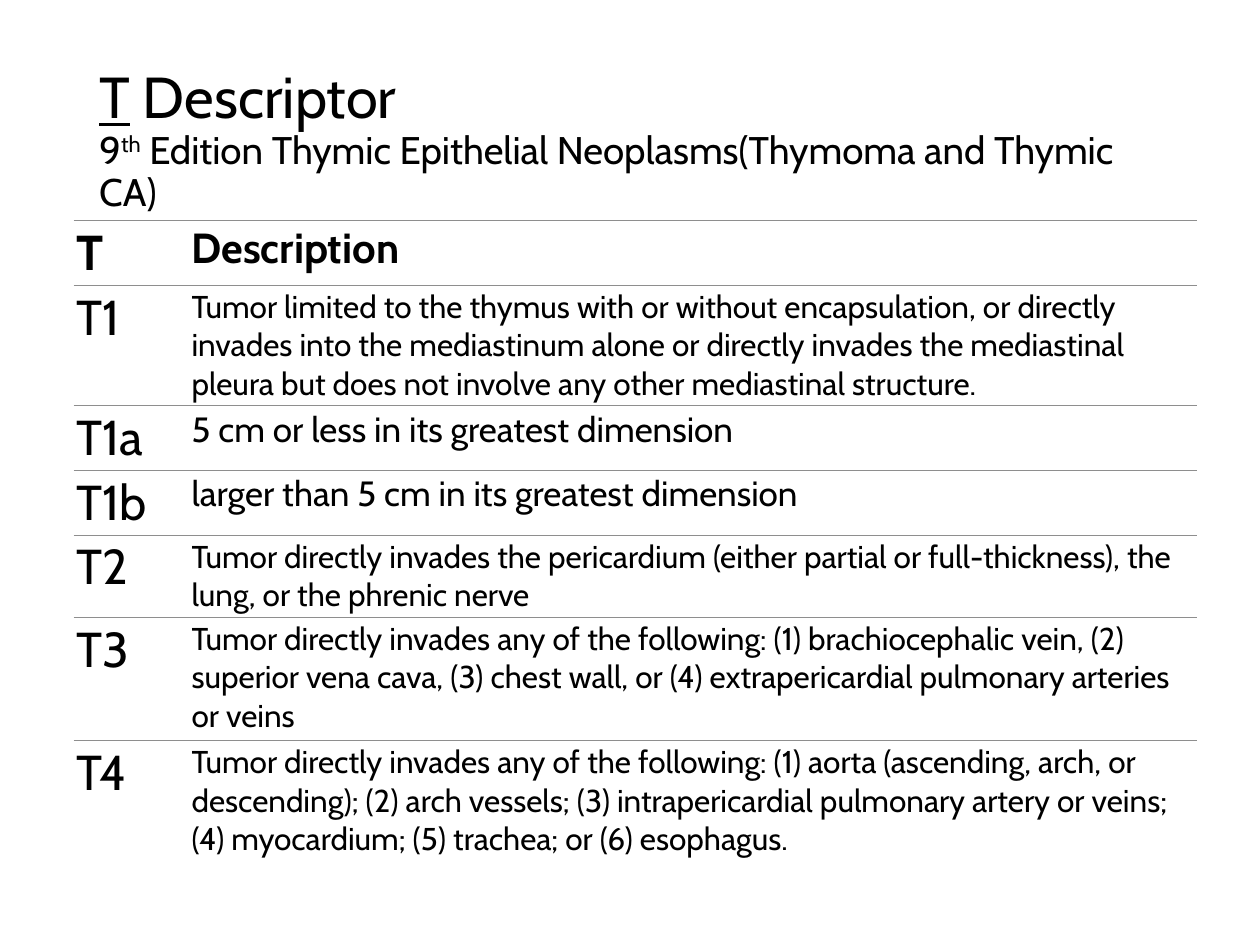
import lxml.etree
import pptx
import pptx.dml.color
import pptx.enum.text
import pptx.oxml.ns
import pptx.util

Pt = pptx.util.Pt
qn = pptx.oxml.ns.qn

BLACK = pptx.dml.color.RGBColor(0x00, 0x00, 0x00)
RULE_GRAY = pptx.dml.color.RGBColor(0x8E, 0x8E, 0x8E)

TITLE_RUNS = [
    ("T", 33, {"u": "sng"}),
    (" Descriptor", 33, {}),
    None,
    ("9", 22, {}),
    ("th", 22, {"baseline": "30000"}),
    (" Edition Thymic Epithelial Neoplasms(Thymoma and Thymic CA)", 22, {}),
]

DESCRIPTORS = [
    ("T", "Description", 24, 34.6),
    ("T1", "Tumor limited to the thymus with or without encapsulation, or directly "
     "invades into the mediastinum alone or directly invades the mediastinal pleura "
     "but does not involve any other mediastinal structure.", 18, 59.8),
    ("T1a", "5 cm or less in its greatest dimension", 20, 34.6),
    ("T1b", "larger than 5 cm in its greatest dimension", 20, 34.6),
    ("T2", "Tumor directly invades the pericardium (either partial or full-thickness), "
     "the lung, or the phrenic nerve", 18, 43.9),
    ("T3", "Tumor directly invades any of the following: (1) brachiocephalic vein, "
     "(2) superior vena cava, (3) chest wall, or (4) extrapericardial pulmonary "
     "arteries or veins", 18, 70.6),
    ("T4", "Tumor directly invades any of the following: (1) aorta (ascending, arch, "
     "or descending); (2) arch vessels; (3) intrapericardial pulmonary artery or "
     "veins; (4) myocardium; (5) trachea; or (6) esophagus.", 18, 85),
]


class DescriptorSlide:
    font_name = "Cabin"
    code_size = 28
    cell_inset = Pt(1.5)
    rule_width = Pt(0.75)

    def __init__(self, presentation):
        self.slide = presentation.slides.add_slide(presentation.slide_layouts[5])

    def style(self, font, size, bold=False):
        font.name = self.font_name
        font.size = Pt(size)
        font.bold = bold
        font.color.rgb = BLACK

    def title(self, left, top, width, height, runs):
        heading = self.slide.shapes.title
        heading.left, heading.top = Pt(left), Pt(top)
        heading.width, heading.height = Pt(width), Pt(height)
        frame = heading.text_frame
        frame.word_wrap = True
        frame.auto_size = pptx.enum.text.MSO_AUTO_SIZE.NONE
        frame.vertical_anchor = pptx.enum.text.MSO_ANCHOR.MIDDLE
        paragraph = frame.paragraphs[0]
        paragraph.alignment = pptx.enum.text.PP_ALIGN.LEFT
        paragraph.line_spacing = 0.9
        self.style(paragraph.font, runs[0][1])
        for part in runs:
            if part is None:
                paragraph.add_line_break()
                line_break = paragraph._p.findall(qn("a:br"))[-1]
                lxml.etree.SubElement(line_break, qn("a:rPr"), sz=str(runs[0][1] * 100))
                continue
            text, size, attributes = part
            run = paragraph.add_run()
            run.text = text
            run.font.size = Pt(size)
            for name, value in attributes.items():
                run._r.get_or_add_rPr().set(name, value)

    def borders(self, cell, ruled_sides):
        properties = cell._tc.get_or_add_tcPr()
        for position, side in enumerate("LRTB"):
            line = lxml.etree.Element(qn(f"a:ln{side}"), w=str(self.rule_width))
            if side in ruled_sides:
                fill = lxml.etree.SubElement(line, qn("a:solidFill"))
                lxml.etree.SubElement(fill, qn("a:srgbClr"), val=str(RULE_GRAY))
            else:
                lxml.etree.SubElement(line, qn("a:noFill"))
            properties.insert(position, line)

    def cell(self, cell, text, size, bold, ruled_sides):
        cell.margin_left = cell.margin_right = self.cell_inset
        cell.margin_top = cell.margin_bottom = self.cell_inset
        cell.fill.background()
        cell.text = text
        self.style(cell.text_frame.paragraphs[0].font, size, bold)
        self.borders(cell, ruled_sides)

    def table(self, left, top, column_widths, descriptors):
        height = sum(descriptor[-1] for descriptor in descriptors)
        table = self.slide.shapes.add_table(
            len(descriptors), len(column_widths),
            Pt(left), Pt(top), Pt(sum(column_widths)), Pt(height)).table
        table.first_row = False
        table.horz_banding = False
        for column, width in zip(table.columns, column_widths):
            column.width = Pt(width)
        for index, (code, description, size, row_height) in enumerate(descriptors):
            table.rows[index].height = Pt(row_height)
            sides = "T" if index == len(descriptors) - 1 else "TB"
            bold = index == 0
            self.cell(table.cell(index, 0), code, self.code_size, bold, sides)
            self.cell(table.cell(index, 1), description, size, bold, sides)


def main():
    presentation = pptx.Presentation()
    presentation.slide_width, presentation.slide_height = Pt(720), Pt(540)
    staging = DescriptorSlide(presentation)
    staging.title(49.5, 28.75, 621, 104.4, TITLE_RUNS)
    staging.table(42, 126, (66, 576), DESCRIPTORS)
    presentation.save("out.pptx")


if __name__ == "__main__":
    main()
